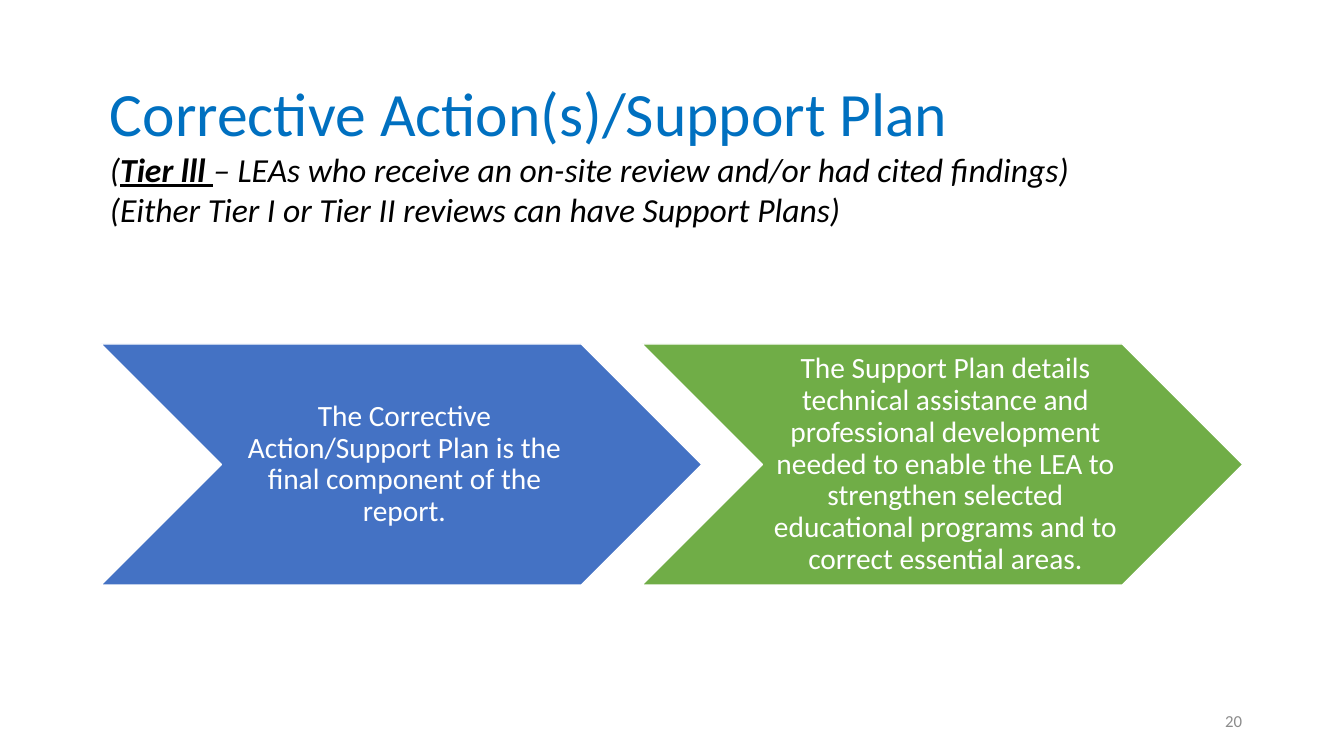
from pptx import Presentation
from pptx import util as u
from pptx.dml.color import RGBColor
from pptx.enum import shapes, text

PX = 914400 / 100.8  # EMU in one px


def px(*lengths):
    return [u.Emu(round(n * PX)) for n in lengths]


def add_text(paragraph, words, size, color, bold=False, italic=False, underline=False):
    run = paragraph.add_run()
    run.text = words
    font = run.font
    font.name, font.size = "Calibri", u.Pt(size)
    font.color.rgb = RGBColor.from_string(color)
    font.bold, font.italic, font.underline = bold, italic, underline


deck = Presentation()
deck.slide_width, deck.slide_height = px(1344, 756)
slide = deck.slides.add_slide(deck.slide_layouts[6])

# Heading
heading = slide.shapes.add_textbox(*px(100, 70, 1037, 166)).text_frame
heading.word_wrap = True
title = heading.paragraphs[0]
add_text(title, "Corrective Action(s)/Support Plan", 44, "0070C0")
title.add_line_break()
add_text(title, "(", 24, "000000", italic=True)
add_text(title, "Tier lll ", 24, "000000", bold=True, italic=True, underline=True)
add_text(title, "– LEAs who receive an on-site review and/or had cited findings)",
         24, "000000", italic=True)
add_text(heading.add_paragraph(), "(Either Tier I or Tier II reviews can have Support Plans)",
         24, "000000", italic=True)

# Chevron process
steps = [
    ("4472C4", "The Corrective Action/Support Plan is the final component of the report."),
    ("70AD47", "The Support Plan details technical assistance and professional development "
               "needed to enable the LEA to strengthen selected educational programs "
               "and to correct essential areas."),
]
for i, (color, words) in enumerate(steps):
    step = slide.shapes.add_shape(shapes.MSO_SHAPE.CHEVRON, *px(101 + 541 * i, 344, 601, 241))
    step.shadow.inherit = False
    step.fill.solid()
    step.fill.fore_color.rgb = RGBColor.from_string(color)
    step.line.color.rgb = RGBColor.from_string("FFFFFF")
    step.line.width = u.Pt(1)
    frame = step.text_frame
    frame.word_wrap = True
    frame.vertical_anchor = text.MSO_ANCHOR.MIDDLE
    frame.margin_left, frame.margin_top, frame.margin_right, frame.margin_bottom = px(9, 3, 3, 3)
    paragraph = frame.paragraphs[0]
    paragraph.alignment = text.PP_ALIGN.CENTER
    paragraph.line_spacing = 0.9
    add_text(paragraph, words, 21, "FFFFFF")

# Slide number
number = slide.shapes.add_textbox(*px(950, 701, 302, 40)).text_frame
number.word_wrap = True
number.vertical_anchor = text.MSO_ANCHOR.MIDDLE
number.paragraphs[0].alignment = text.PP_ALIGN.RIGHT
add_text(number.paragraphs[0], "20", 12, "8C8C8C")

deck.save("out.pptx")
